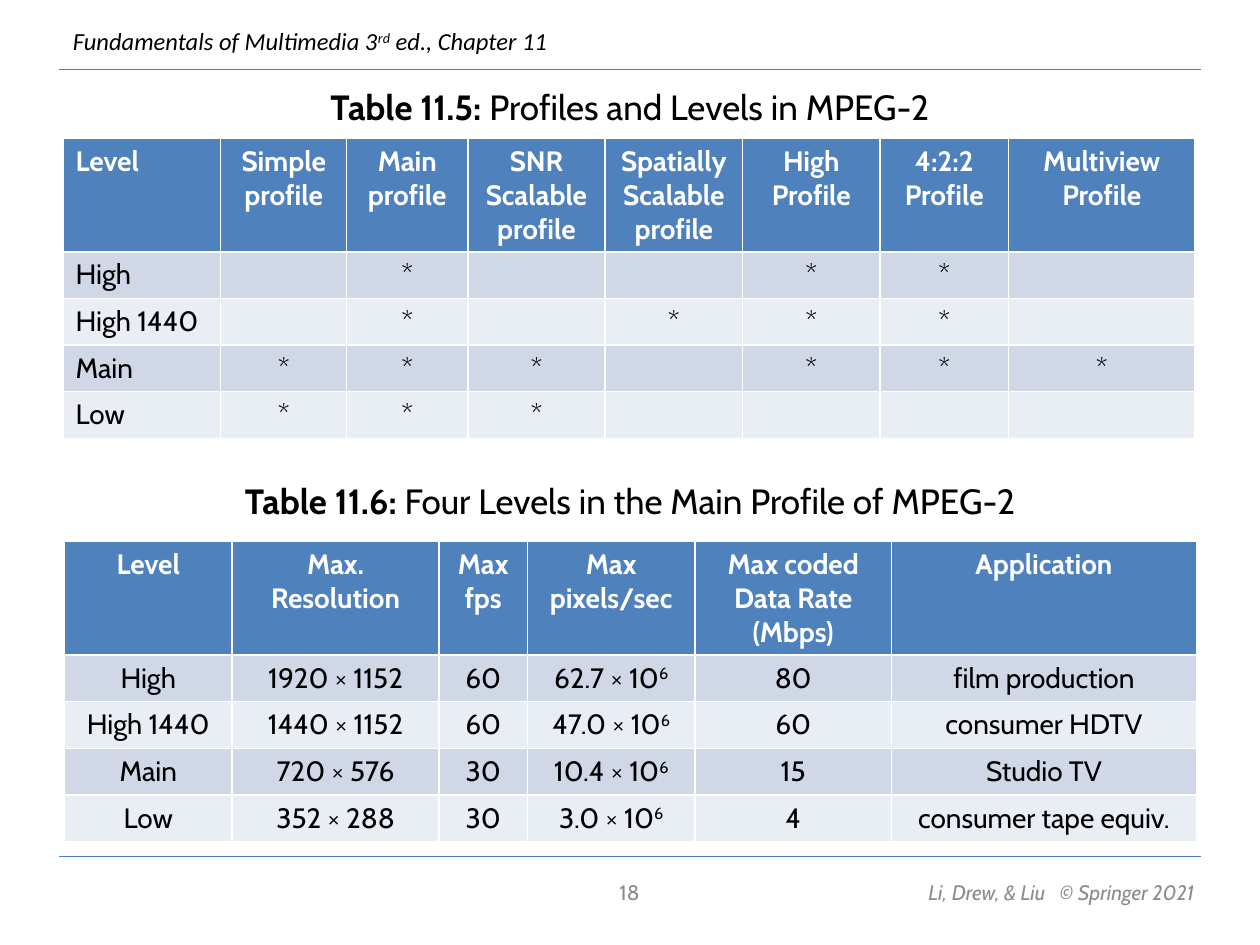
from lxml import etree
from pptx import Presentation
from pptx.dml.color import RGBColor
from pptx.enum import shapes, text
from pptx.oxml import ns
from pptx.util import Cm, Pt

BLACK = RGBColor(0x00, 0x00, 0x00)
WHITE = RGBColor(0xFF, 0xFF, 0xFF)
GRAY = RGBColor(0x8C, 0x8C, 0x8C)
RULE = RGBColor(0x4B, 0x7E, 0xBC)
HEAD = RGBColor(0x4F, 0x81, 0xBD)
BANDS = [RGBColor(0xD0, 0xD8, 0xE8), RGBColor(0xE9, 0xED, 0xF4)]
LEFT, MID, RIGHT = text.PP_ALIGN.LEFT, text.PP_ALIGN.CENTER, text.PP_ALIGN.RIGHT
TOP, CENTER = text.MSO_ANCHOR.TOP, text.MSO_ANCHOR.MIDDLE


def write(frame, words, lead="", size=16, face="Cabin", color=BLACK,
          bold=False, italic=False, align=MID):
    """Fill a text frame; lead is bold, and ^...^ marks a superscript."""
    par = frame.paragraphs[0]
    par.alignment = align
    parts = [(lead, True, False)]
    parts += [(s, bold, i % 2 == 1) for i, s in enumerate(words.split("^"))]
    for string, heavy, raised in parts:
        if not string:
            continue
        run = par.add_run()
        run.text = string
        font = run.font
        font.name, font.size = face, Pt(size)
        font.bold, font.italic = heavy, italic
        font.color.rgb = color
        if raised:
            run._r.get_or_add_rPr().set("baseline", "30000")
    # Keeps the rows of empty cells at the same height
    par._p.get_or_add_endParaRPr().set("sz", str(size * 100))


deck = Presentation()
deck.slide_width, deck.slide_height = Cm(25.4), Cm(19.05)
slide = deck.slides.add_slide(deck.slide_layouts[5])

# Rules above and below the content
for y in (1.4, 17.27):
    line = slide.shapes.add_connector(
        shapes.MSO_CONNECTOR.STRAIGHT, Cm(1.19), Cm(y), Cm(24.21), Cm(y))
    line.line.color.rgb = RULE
    line.line.width = Pt(0.75)
    etree.SubElement(line._element.spPr, ns.qn("a:effectLst"))

# First caption, as the slide title
title = slide.shapes.title
title.left, title.top, title.width, title.height = Cm(1.27), Cm(1.65), Cm(22.86), Cm(1)
title.text_frame.vertical_anchor = CENTER
title.text_frame.auto_size = text.MSO_AUTO_SIZE.NONE
write(title.text_frame, "Profiles and Levels in MPEG-2", lead="Table 11.5: ", size=20)

# Running head, second caption, page number and credit
notes = [
    (1.22, 0.41, 10.21, 0.86, TOP, "Fundamentals of Multimedia 3^rd^ ed., Chapter 11",
     dict(size=14, face="Calibri", italic=True, align=LEFT)),
    (1.3, 9.55, 22.81, 1.12, TOP, "Four Levels in the Main Profile of MPEG-2",
     dict(lead="Table 11.6: ", size=20)),
    (9.73, 17.48, 5.92, 1.02, CENTER, "18", dict(size=12, color=GRAY)),
    (16.28, 17.48, 8.05, 1.02, CENTER, "Li, Drew, & Liu   © Springer 2021",
     dict(size=12, color=GRAY, italic=True, align=RIGHT)),
]
for x, y, wide, high, anchor, words, style in notes:
    frame = slide.shapes.add_textbox(Cm(x), Cm(y), Cm(wide), Cm(high)).text_frame
    frame.word_wrap = True
    frame.vertical_anchor = anchor
    write(frame, words, **style)

# Table contents
marks = [
    ["Level", "Simple profile", "Main profile", "SNR Scalable profile",
     "Spatially Scalable profile", "High Profile", "4:2:2 Profile", "Multiview Profile"],
    ["High", "", "*", "", "", "*", "*", ""],
    ["High 1440", "", "*", "", "*", "*", "*", ""],
    ["Main", "*", "*", "*", "", "*", "*", "*"],
    ["Low", "*", "*", "*", "", "", "", ""],
]
levels = [
    ["Level", "Max. Resolution", "Max fps", "Max pixels/sec",
     "Max coded Data Rate (Mbps)", "Application"],
    ["High", "1920 × 1152", "60", "62.7 × 10^6^", "80", "film production"],
    ["High 1440", "1440 × 1152", "60", "47.0 × 10^6^", "60", "consumer HDTV"],
    ["Main", "720 × 576", "30", "10.4 × 10^6^", "15", "Studio TV"],
    ["Low", "352 × 288", "30", "3.0 × 10^6^", "4", "consumer tape equiv."],
]
tables = [
    (1.27, 2.79, marks, [3.18, 2.54, 2.44, 2.77, 2.77, 2.77, 2.59, 3.76], LEFT),
    (1.3, 10.92, levels, [3.38, 4.17, 1.78, 3.38, 3.96, 6.15], MID),
]

# Both tables: blue header row, then banded rows
for x, y, rows, widths, first in tables:
    grid = slide.shapes.add_table(
        len(rows), len(widths), Cm(x), Cm(y), Cm(sum(widths)), Cm(6.02)).table
    for col, wide in zip(grid.columns, widths):
        col.width = Cm(wide)
    for r, row in enumerate(rows):
        grid.rows[r].height = Cm(0.94 if r else 2.26)
        for c, words in enumerate(row):
            cell = grid.cell(r, c)
            cell.fill.solid()
            cell.fill.fore_color.rgb = BANDS[(r - 1) % 2] if r else HEAD
            write(cell.text_frame, words, color=BLACK if r else WHITE,
                  bold=r == 0, align=MID if c else first)

deck.save("out.pptx")
